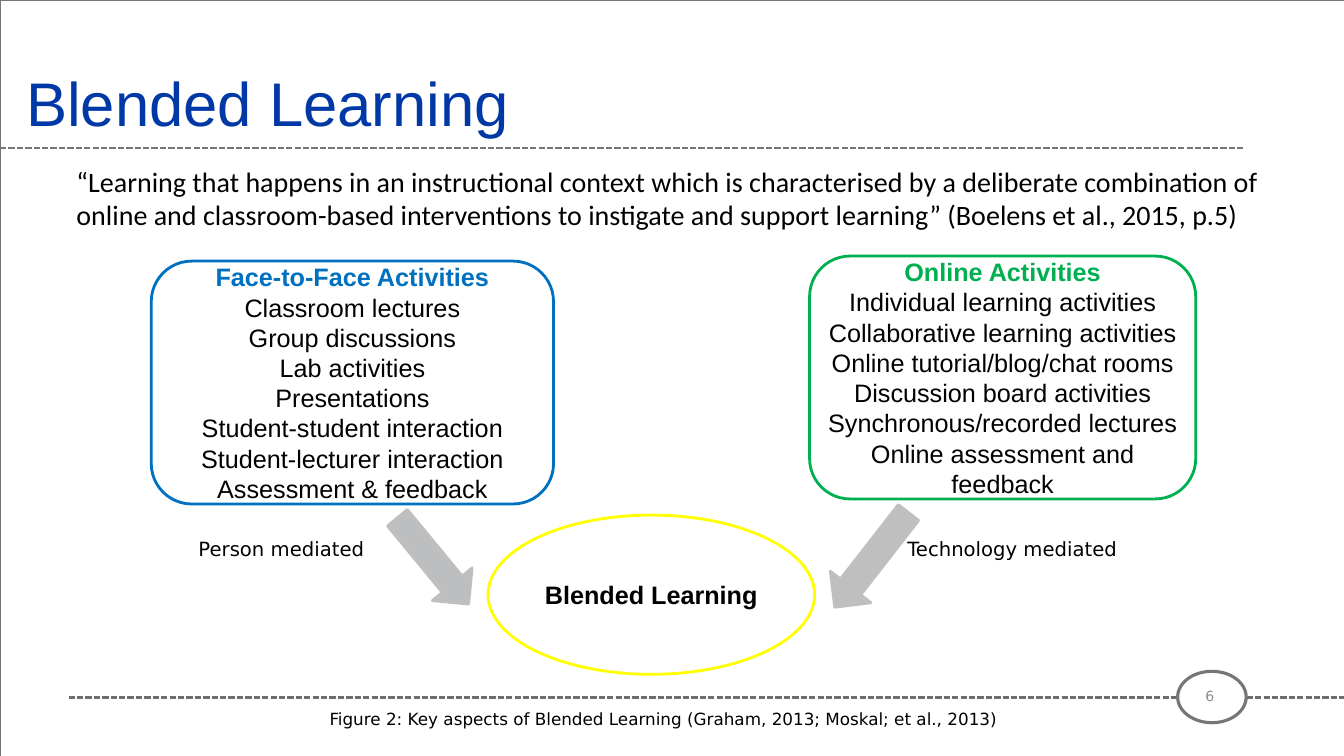
from pptx import Presentation
from pptx import util as u
from pptx.dml.color import RGBColor
from pptx.enum import dml, shapes, text
from pptx.oxml.ns import qn
from lxml import etree

BLACK, GREY, ARROW = "000000", "747678", "BFBFBF"
BLUE, GREEN, YELLOW, NAVY = "0070C0", "00B050", "FFFF00", "0039A6"
SHAPE = shapes.MSO_SHAPE
LEFT, CENTER = text.PP_ALIGN.LEFT, text.PP_ALIGN.CENTER
TOP, MIDDLE = text.MSO_ANCHOR.TOP, text.MSO_ANCHOR.MIDDLE


def rgb(value):
    return RGBColor.from_string(value)


class SlideBuilder:
    """Holds the current slide and the style shared by its elements."""
    heading_font = "Arial"
    quote_font = "Calibri"
    label_font = "DejaVu Sans"

    def __init__(self, slide):
        self.s = slide

    def line(self, x1, y1, x2, y2, color=GREY):
        c = self.s.shapes.add_connector(
            shapes.MSO_CONNECTOR.STRAIGHT, *map(u.Inches, (x1, y1, x2, y2)))
        c.line.color.rgb = rgb(color)
        c.line.width = u.Pt(1.5)
        # SQUARE_DOT and ROUND_DOT both differ from the short system dash
        c.line.dash_style = dml.MSO_LINE.DASH
        c._element.spPr.find(".//" + qn("a:prstDash")).set("val", "sysDash")
        etree.SubElement(c._element.spPr, qn("a:effectLst"))

    def shape(self, kind, box, line, width=2, fill=None, rotation=0):
        sp = self.s.shapes.add_shape(kind, *map(u.Inches, box))
        sp.shadow.inherit = False
        if fill:
            sp.fill.solid()
            sp.fill.fore_color.rgb = rgb(fill)
        else:
            sp.fill.background()
        sp.line.color.rgb = rgb(line)
        sp.line.width = u.Pt(width)
        sp.rotation = rotation
        return sp

    def set_text(self, sp, content, size, font, color=BLACK, align=LEFT,
                 anchor=TOP):
        tf = sp.text_frame
        tf.word_wrap = True
        tf.vertical_anchor = anchor
        tf.text = content
        for p in tf.paragraphs:
            p.alignment = align
            for r in p.runs:
                r.font.size = u.Pt(size)
                r.font.name = font
                r.font.color.rgb = rgb(color)
        return tf

    def label(self, box, content, size, font=label_font, **style):
        sp = self.s.shapes.add_textbox(*map(u.Inches, box))
        self.set_text(sp, content, size, font, **style)

    def topic(self, kind, box, outline, heading, items=(), heading_color=BLACK):
        """Outlined shape with a bold heading above its list of items."""
        sp = self.shape(kind, box, outline)
        tf = self.set_text(sp, "\n".join([heading, *items]), 18,
                           self.heading_font, align=CENTER, anchor=MIDDLE)
        tf.margin_left = tf.margin_right = u.Inches(0.05)
        tf.margin_top = tf.margin_bottom = u.Inches(0.05)
        for p in tf.paragraphs:
            p.line_spacing = u.Pt(21.6)
        font = tf.paragraphs[0].runs[0].font
        font.bold = True
        font.color.rgb = rgb(heading_color)


def main():
    prs = Presentation()
    prs.slide_width, prs.slide_height = u.Inches(13.33), u.Inches(7.5)
    b = SlideBuilder(prs.slides.add_slide(prs.slide_layouts[6]))

    # Frame, rules and page number badge
    b.line(0.68, 6.92, 13.33, 6.92, "6D6E71")
    b.shape(SHAPE.OVAL, (11.68, 6.66, 0.68, 0.51), GREY, 2.25, "FFFFFF")
    b.shape(SHAPE.RECTANGLE, (0, 0, 13.33, 7.5), GREY, 0.5)
    b.line(0, 1.47, 12.34, 1.47)

    b.label((0.16, 0.55, 9.35, 0.93), "Blended Learning", 44, b.heading_font,
            color=NAVY, anchor=MIDDLE)
    b.label((0.66, 1.58, 12.02, 0.77),
            "“Learning that happens in an instructional context which is "
            "characterised by a deliberate combination of online and "
            "classroom-based interventions to instigate and support learning” "
            "(Boelens et al., 2015, p.5)", 20, b.quote_font)

    # Two kinds of activity leading to blended learning
    b.topic(SHAPE.ROUNDED_RECTANGLE, (1.5, 2.59, 3.99, 2.41), BLUE,
            "Face-to-Face Activities",
            ["Classroom lectures", "Group discussions", "Lab activities",
             "Presentations", "Student-student interaction",
             "Student-lecturer interaction", "Assessment & feedback"], BLUE)
    b.topic(SHAPE.ROUNDED_RECTANGLE, (8.03, 2.54, 3.83, 2.41), GREEN,
            "Online Activities",
            ["Individual learning activities",
             "Collaborative learning activities",
             "Online tutorial/blog/chat rooms", "Discussion board activities",
             "Synchronous/recorded lectures",
             "Online assessment and feedback"], GREEN)
    b.topic(SHAPE.OVAL, (4.84, 5.11, 3.24, 1.58), YELLOW, "Blended Learning")

    b.shape(SHAPE.DOWN_ARROW, (4.04, 5.01, 0.51, 1.11), ARROW,
            fill="BCBEC0", rotation=320.5)
    b.shape(SHAPE.DOWN_ARROW, (8.39, 4.96, 0.51, 1.19), ARROW,
            fill=ARROW, rotation=37.9)

    for x, mediator in ((1.87, "Person"), (8.9, "Technology")):
        b.label((x, 5.28, 2.38, 0.34), f"{mediator} mediated", 14)
    b.label((3.17, 6.98, 7.57, 0.3),
            "Figure 2: Key aspects of Blended Learning "
            "(Graham, 2013; Moskal; et al., 2013)", 12)
    b.label((11.71, 6.68, 0.58, 0.45), "6", 10, color="8C8C8C",
            align=CENTER, anchor=MIDDLE)

    prs.save("out.pptx")


if __name__ == "__main__":
    main()
